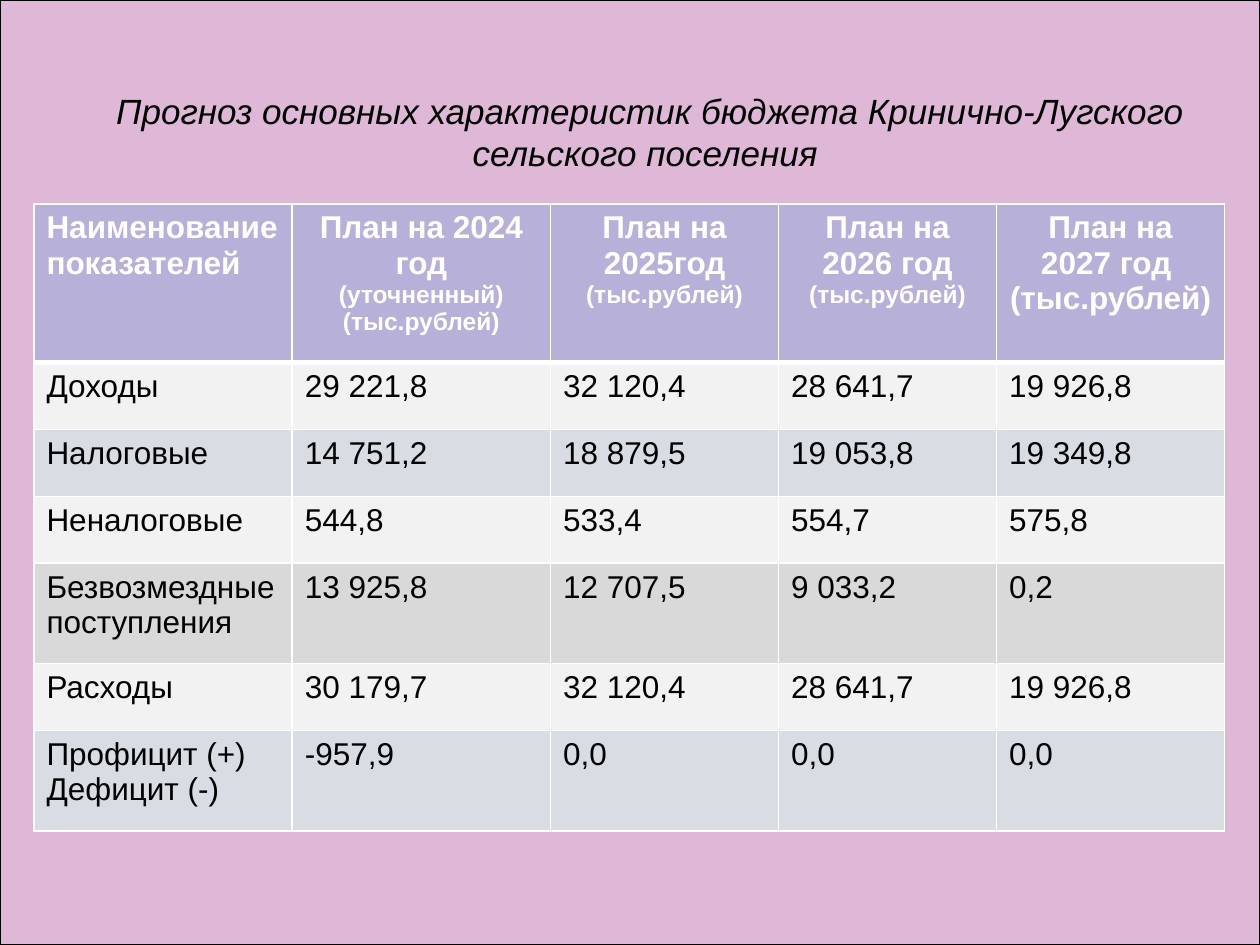
from lxml.etree import SubElement
from pptx import Presentation
from pptx.dml.color import RGBColor
from pptx.enum.shapes import MSO_SHAPE as Shape
from pptx.enum.text import MSO_ANCHOR as Anchor, MSO_AUTO_SIZE as AutoSize, PP_ALIGN as Align
from pptx.oxml.ns import qn
from pptx.util import Pt

SKY = RGBColor(0xC6, 0xE7, 0xFC)
PINK = RGBColor(0xDF, 0xB7, 0xD7)
LILAC = RGBColor(0xB7, 0xB1, 0xD9)
LIGHT = RGBColor(0xF2, 0xF2, 0xF2)
BLUE_GREY = RGBColor(0xD8, 0xDD, 0xE3)
GREY = RGBColor(0xD9, 0xD9, 0xD9)
BLACK = RGBColor(0, 0, 0)
WHITE = RGBColor(0xFF, 0xFF, 0xFF)

FONT = "Arial"
TITLE = "Прогноз основных характеристик бюджета Кринично-Лугского сельского поселения "
COLUMN_WIDTHS = [147.6, 147.6, 130.3, 124.6, 130.3]

# A header is a list of paragraphs, each a list of (text, size) runs
HEADERS = [
    [[("Наименование показателей", 18)]],
    [[("План на 2024 год", 18)], [("(уточненный)", 14)], [("(тыс.рублей)", 14)]],
    [[("План на 2025год", 18)], [("(тыс.рублей)", 14)]],
    [[("План на 2026 год ", 18), ("(тыс.рублей)", 14)]],
    [[("План на 2027 год ", 18)], [("(тыс.рублей)", 18)]],
]

# Row height, fill, cell texts
BUDGET_ROWS = [
    (38.2, LIGHT, ["Доходы", "29 221,8", "32 120,4", "28 641,7", "19 926,8"]),
    (38.2, BLUE_GREY, ["Налоговые", "14 751,2", "18 879,5", "19 053,8", "19 349,8"]),
    (38.2, LIGHT, ["Неналоговые", "544,8", "533,4", "554,7", "575,8"]),
    (57.4, GREY, ["Безвозмездные поступления", "13 925,8", "12 707,5", "9 033,2", "0,2"]),
    (38.2, LIGHT, ["Расходы", "30 179,7", "32 120,4", "28 641,7", "19 926,8"]),
    (57.4, BLUE_GREY, ["Профицит (+)\nДефицит (-)", "-957,9", "0,0", "0,0", "0,0"]),
]
HEADER_HEIGHT = 90.7


def write_text(text_frame, paragraphs, color, align=Align.LEFT, bold=False, italic=False):
    for index, runs in enumerate(paragraphs):
        paragraph = text_frame.paragraphs[0] if index == 0 else text_frame.add_paragraph()
        paragraph.alignment = align
        for text, size in runs:
            run = paragraph.add_run()
            run.text = text
            run.font.name = FONT
            run.font.size = Pt(size)
            run.font.bold = bold
            run.font.italic = italic
            run.font.color.rgb = color


def style_cell(cell, fill, top=1, bottom=1):
    properties = cell._tc.get_or_add_tcPr()
    for side, width in (("L", 1), ("R", 1), ("T", top), ("B", bottom)):
        line = SubElement(properties, qn(f"a:ln{side}"), w=str(Pt(width)))
        line_fill = SubElement(line, qn("a:solidFill"))
        SubElement(line_fill, qn("a:srgbClr"), val=str(WHITE))
    cell.fill.solid()
    cell.fill.fore_color.rgb = fill


def add_backdrop(slide, width, height):
    slide.background.fill.solid()
    slide.background.fill.fore_color.rgb = SKY
    shape = slide.shapes.add_shape(Shape.RECTANGLE, 0, 0, width, height)
    shape.shadow.inherit = False
    shape.fill.solid()
    shape.fill.fore_color.rgb = PINK
    shape.line.color.rgb = BLACK
    shape.line.width = Pt(0.75)


def add_budget_table(slide):
    heights = [HEADER_HEIGHT] + [height for height, _, _ in BUDGET_ROWS]
    table = slide.shapes.add_table(
        len(heights), len(COLUMN_WIDTHS), Pt(19.4), Pt(116.6),
        Pt(sum(COLUMN_WIDTHS)), Pt(sum(heights))).table
    for column, width in zip(table.columns, COLUMN_WIDTHS):
        column.width = Pt(width)
    for row, height in zip(table.rows, heights):
        row.height = Pt(height)

    # Header row
    for index, paragraphs in enumerate(HEADERS):
        cell = table.cell(0, index)
        style_cell(cell, LILAC, bottom=3)
        align = Align.CENTER if index else Align.LEFT
        write_text(cell.text_frame, paragraphs, WHITE, align, bold=True)

    # Budget figures
    for row_index, (_, fill, texts) in enumerate(BUDGET_ROWS, start=1):
        for column_index, text in enumerate(texts):
            cell = table.cell(row_index, column_index)
            style_cell(cell, fill, top=3 if row_index == 1 else 1)
            paragraphs = [[(line, 18)] for line in text.split("\n")]
            write_text(cell.text_frame, paragraphs, BLACK)


def add_title(slide):
    box = slide.shapes.add_textbox(Pt(54), Pt(47.5), Pt(635), Pt(55.4))
    box.text_frame.word_wrap = True
    box.text_frame.auto_size = AutoSize.SHAPE_TO_FIT_TEXT
    box.text_frame.vertical_anchor = Anchor.TOP
    write_text(box.text_frame, [[(TITLE, 20)]], BLACK, Align.CENTER, italic=True)


def main():
    presentation = Presentation()
    presentation.slide_width = Pt(720)
    presentation.slide_height = Pt(540)
    slide = presentation.slides.add_slide(presentation.slide_layouts[6])
    add_backdrop(slide, presentation.slide_width, presentation.slide_height)
    add_budget_table(slide)
    add_title(slide)
    presentation.save("out.pptx")


if __name__ == "__main__":
    main()
